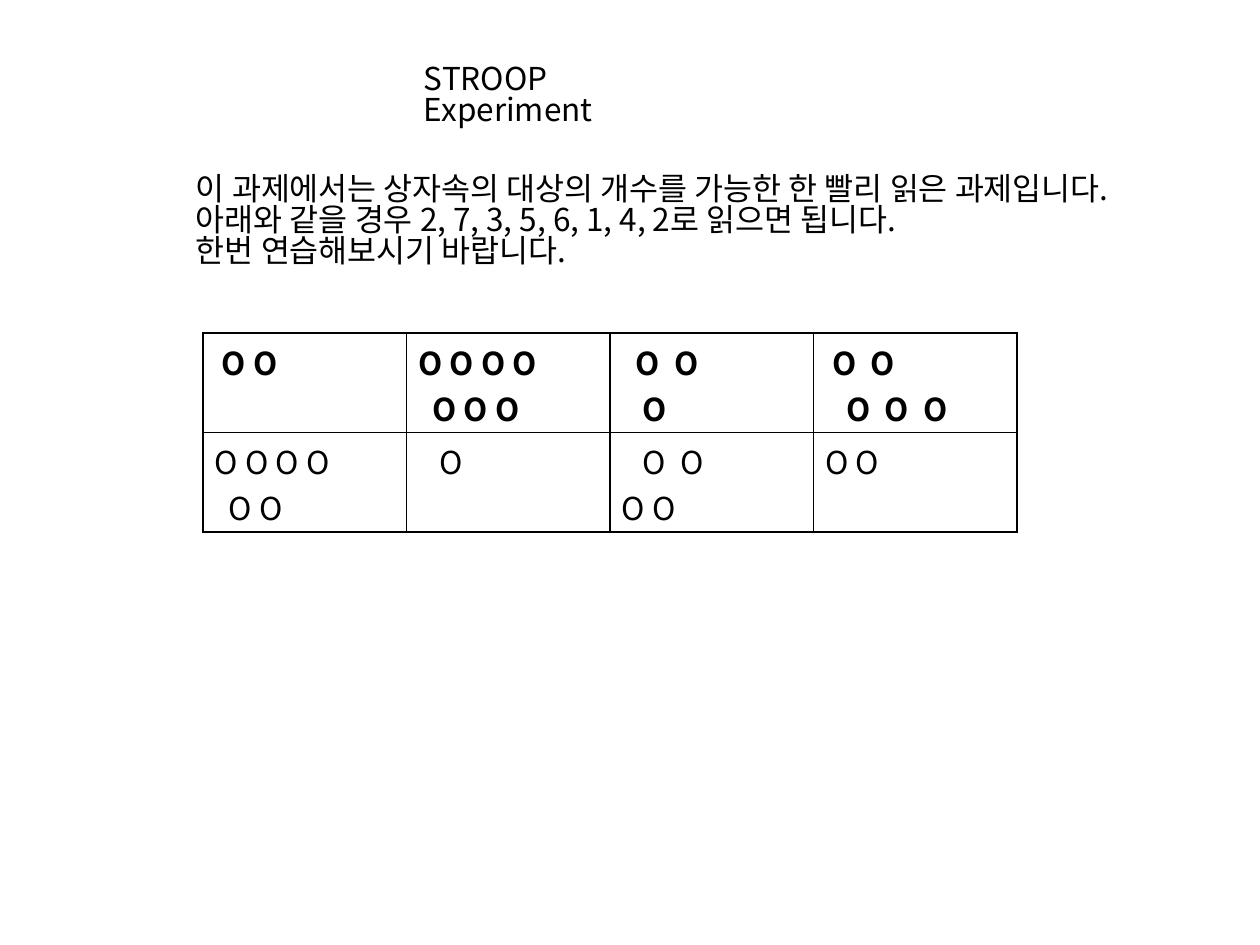
from lxml import etree
from pptx import Presentation
from pptx.dml.color import RGBColor
from pptx.enum.text import MSO_ANCHOR, MSO_AUTO_SIZE, PP_ALIGN
from pptx.oxml.ns import qn
from pptx.util import Pt

TOP, NO_FIT, LEFT = MSO_ANCHOR.TOP, MSO_AUTO_SIZE.NONE, PP_ALIGN.LEFT
FONT = "Noto Sans CJK KR"
COLORS = {"ink": "000000"}

# Content
TITLE = "STROOP Experiment"
INSTRUCTIONS = [
    "이 과제에서는 상자속의 대상의 개수를 가능한 한 빨리 읽은 과제입니다.",
    "아래와 같을 경우 2, 7, 3, 5, 6, 1, 4, 2로 읽으면 됩니다.",
    "한번 연습해보시기 바랍니다.",
]
# Each line of a box: (number of O marks, indent steps, wide gaps)
BOXES = [
    [
        [(2, 1, False)],
        [(4, 0, False), (3, 2, False)],
        [(2, 2, True), (1, 3, False)],
        [(2, 1, True), (3, 3, True)],
    ],
    [
        [(4, 0, False), (2, 2, False)],
        [(1, 3, False)],
        [(2, 3, True), (2, 0, False)],
        [(2, 0, False)],
    ],
]

# Layout in px
SLIDE = (1260, 945)
TITLE_BOX = (412, 55, 317, 50)
BODY_BOX = (184, 165, 1056, 127)
TABLE_BOX = (203, 333, 814, 199)
INDENT_STEP = 7
WIDE_GAP = "200"  # letter spacing, hundredths of a point


def px(n):
    return round(n * 914400 / 126)


def style(p, bold=False, indent=0):
    p.alignment = LEFT
    p.space_before = p.space_after = Pt(0)
    f = p.font
    f.name, f.size, f.bold = FONT, Pt(18), bold
    f.color.rgb = RGBColor.from_string(COLORS["ink"])
    pPr = p._p.get_or_add_pPr()
    pPr.set("marL", str(px(indent)))
    pPr.set("indent", "0")
    for r in p.runs:
        etree.SubElement(r._r.get_or_add_rPr(), qn("a:ea"), typeface=FONT)


def fill_placeholder(sp, box, lines):
    sp.left, sp.top, sp.width, sp.height = map(px, box)
    tf = sp.text_frame
    tf.text = "\n".join(lines)
    tf.word_wrap, tf.auto_size, tf.vertical_anchor = True, NO_FIT, TOP
    tf.margin_left, tf.margin_right = px(12), px(18)
    tf.margin_top, tf.margin_bottom = px(10), 0
    for p in tf.paragraphs:
        style(p)
        p.line_spacing = 0.83
        pPr = p._p.get_or_add_pPr()
        bullet = etree.Element(qn("a:buNone"))
        pPr.insert(pPr.index(pPr.find(qn("a:defRPr"))), bullet)


def add_borders(cell):
    tcPr = cell._tc.get_or_add_tcPr()
    for i, side in enumerate(("a:lnL", "a:lnR", "a:lnT", "a:lnB")):
        ln = etree.Element(qn(side), w=str(Pt(1)))
        fill = etree.SubElement(ln, qn("a:solidFill"))
        etree.SubElement(fill, qn("a:srgbClr"), val=COLORS["ink"])
        tcPr.insert(i, ln)


def fill_cell(cell, lines, bold):
    cell.fill.background()
    cell.margin_left = cell.margin_right = px(12)
    cell.margin_top, cell.margin_bottom = px(6), px(1)
    cell.vertical_anchor = TOP
    tf = cell.text_frame
    tf.text = "\n".join(" ".join("O" * count) for count, _, _ in lines)
    for p, (_, steps, wide) in zip(tf.paragraphs, lines):
        style(p, bold, steps * INDENT_STEP)
        if wide:
            p.runs[0]._r.get_or_add_rPr().set("spc", WIDE_GAP)
    add_borders(cell)


prs = Presentation()
prs.slide_width, prs.slide_height = map(px, SLIDE)
s = prs.slides.add_slide(prs.slide_layouts[1])

# Title and instructions
fill_placeholder(s.shapes.title, TITLE_BOX, [TITLE])
fill_placeholder(s.placeholders[1], BODY_BOX, INSTRUCTIONS)

# Practice boxes, first row bold
rows, cols = len(BOXES), len(BOXES[0])
table = s.shapes.add_table(rows, cols, *map(px, TABLE_BOX)).table
table.first_row = table.horz_banding = False
for i, row in enumerate(BOXES):
    for j, lines in enumerate(row):
        fill_cell(table.cell(i, j), lines, bold=i == 0)

prs.save("out.pptx")
